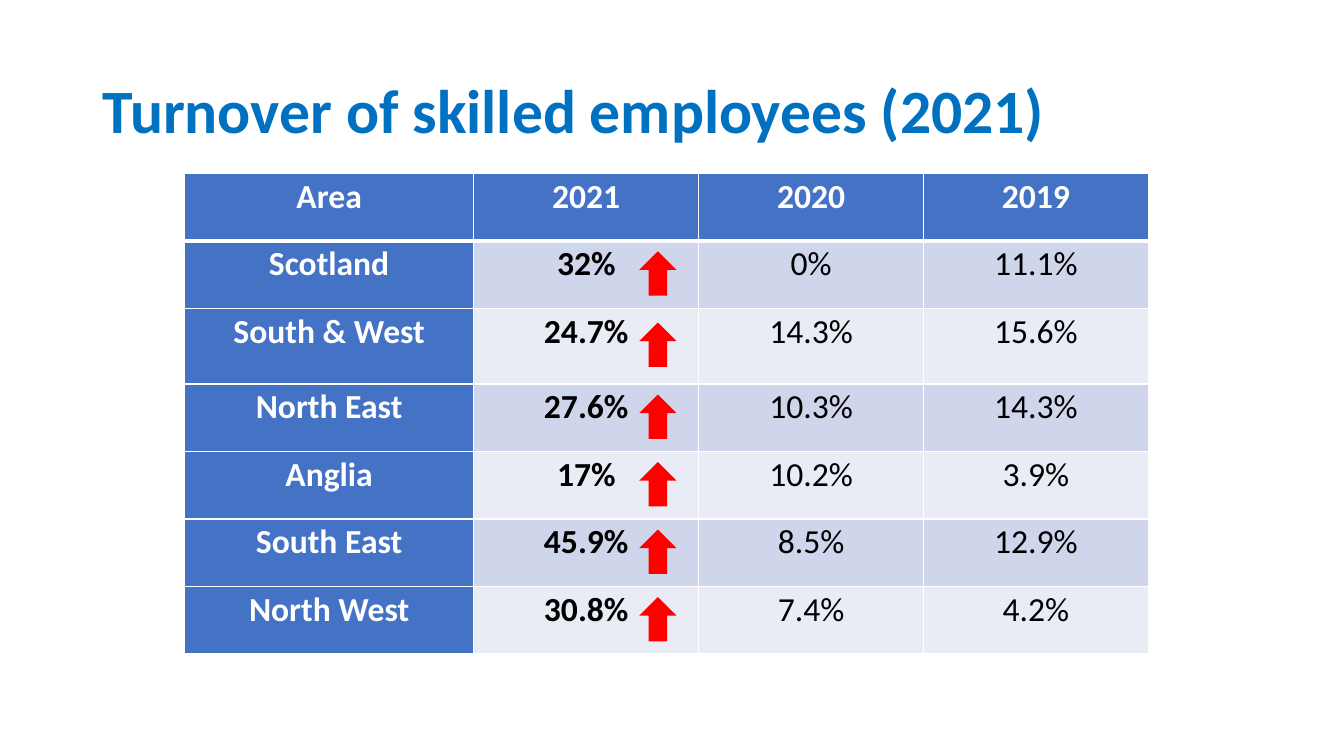
from lxml import etree
from pptx import Presentation
from pptx.dml.color import RGBColor
from pptx.enum.shapes import MSO_SHAPE
from pptx.enum.text import MSO_ANCHOR, PP_ALIGN
from pptx.oxml.ns import qn
from pptx.util import Inches, Pt

WHITE = RGBColor(0xFF, 0xFF, 0xFF)
BLACK = RGBColor(0x00, 0x00, 0x00)
TITLE_BLUE = RGBColor(0x00, 0x70, 0xC0)
HEADER_BLUE = RGBColor(0x44, 0x72, 0xC4)
BANDS = (RGBColor(0xCF, 0xD5, 0xEA), RGBColor(0xE9, 0xEB, 0xF5))
ARROW_RED = RGBColor(0xFF, 0x00, 0x00)
FONT = "Calibri"

TURNOVER = (
    ("Area", "2021", "2020", "2019"),
    ("Scotland", "32%", "0%", "11.1%"),
    ("South & West", "24.7%", "14.3%", "15.6%"),
    ("North East", "27.6%", "10.3%", "14.3%"),
    ("Anglia", "17%", "10.2%", "3.9%"),
    ("South East", "45.9%", "8.5%", "12.9%"),
    ("North West", "30.8%", "7.4%", "4.2%"),
)
COLUMN_WIDTHS = (2.87, 2.23, 2.23, 2.23)
ROW_HEIGHTS = (0.67, 0.67, 0.75, 0.67, 0.67, 0.67, 0.67)


def add_span(para, text, size, color, bold):
    """Add one formatted run to a paragraph."""
    span = para.add_run()
    span.text = text
    span.font.name = FONT
    span.font.size = Pt(size)
    span.font.bold = bold
    span.font.color.rgb = color


def add_title(page, left, top, width, height):
    """Write the slide title, centred vertically in its box."""
    box = page.shapes.add_textbox(Inches(left), Inches(top), Inches(width), Inches(height))
    frame = box.text_frame
    frame.word_wrap = True
    frame.vertical_anchor = MSO_ANCHOR.MIDDLE
    para = frame.paragraphs[0]
    para.line_spacing = 0.9
    add_span(para, "Turnover of skilled employees (2021)", 44, TITLE_BLUE, True)


def set_borders(cell, widths):
    """Draw white cell borders with the given widths by side."""
    properties = cell._tc.get_or_add_tcPr()
    for position, (side, width) in enumerate(widths.items()):
        line = etree.Element(qn(f"a:ln{side}"), w=str(Pt(width)))
        fill = etree.SubElement(line, qn("a:solidFill"))
        etree.SubElement(fill, qn("a:srgbClr"), val=str(WHITE))
        properties.insert(position, line)


def fill_cell(cell, text, row, column):
    """Write and format one table cell according to its row and column."""
    is_label = row == 0 or column == 0
    cell.margin_left = cell.margin_right = Inches(0.07)
    cell.margin_top = cell.margin_bottom = 0
    cell.fill.solid()
    cell.fill.fore_color.rgb = HEADER_BLUE if is_label else BANDS[(row - 1) % 2]
    para = cell.text_frame.paragraphs[0]
    para.alignment = PP_ALIGN.CENTER
    para.line_spacing = 1.07
    if row == 0:
        para.space_after = Pt(8)
    add_span(para, text, 24, WHITE if is_label else BLACK, is_label or column == 1)
    set_borders(cell, {"L": 1, "R": 1, "T": 3 if row == 1 else 1, "B": 3 if row == 0 else 1})


def add_turnover_table(page, left, top):
    """Build the turnover table with its corner at the given point."""
    frame = page.shapes.add_table(
        len(TURNOVER), len(COLUMN_WIDTHS), Inches(left), Inches(top),
        Inches(sum(COLUMN_WIDTHS)), Inches(sum(ROW_HEIGHTS)))
    table = frame.table
    for column, width in zip(table.columns, COLUMN_WIDTHS):
        column.width = Inches(width)
    for row, height in zip(table.rows, ROW_HEIGHTS):
        row.height = Inches(height)
    for row, values in enumerate(TURNOVER):
        for column, text in enumerate(values):
            fill_cell(table.cell(row, column), text, row, column)


def add_rise_arrows(page, left, table_top):
    """Place one upward arrow in each body row of the table."""
    width, height = 0.37, 0.44
    row_top = table_top + ROW_HEIGHTS[0]
    for row_height in ROW_HEIGHTS[1:]:
        top = row_top + 0.45 * (row_height - height)
        arrow = page.shapes.add_shape(
            MSO_SHAPE.UP_ARROW, Inches(left), Inches(top), Inches(width), Inches(height))
        arrow.shadow.inherit = False
        arrow.fill.solid()
        arrow.fill.fore_color.rgb = ARROW_RED
        arrow.line.fill.background()
        row_top += row_height


def main():
    """Build and save the turnover slide."""
    deck = Presentation()
    deck.slide_width, deck.slide_height = Inches(13.33), Inches(7.5)
    page = deck.slides.add_slide(deck.slide_layouts[6])
    table_left, table_top = 1.83, 1.72
    add_title(page, 0.92, 0.4, 11.5, 1.45)
    add_turnover_table(page, table_left, table_top)
    add_rise_arrows(page, table_left + 4.51, table_top)
    deck.save("out.pptx")


if __name__ == "__main__":
    main()
